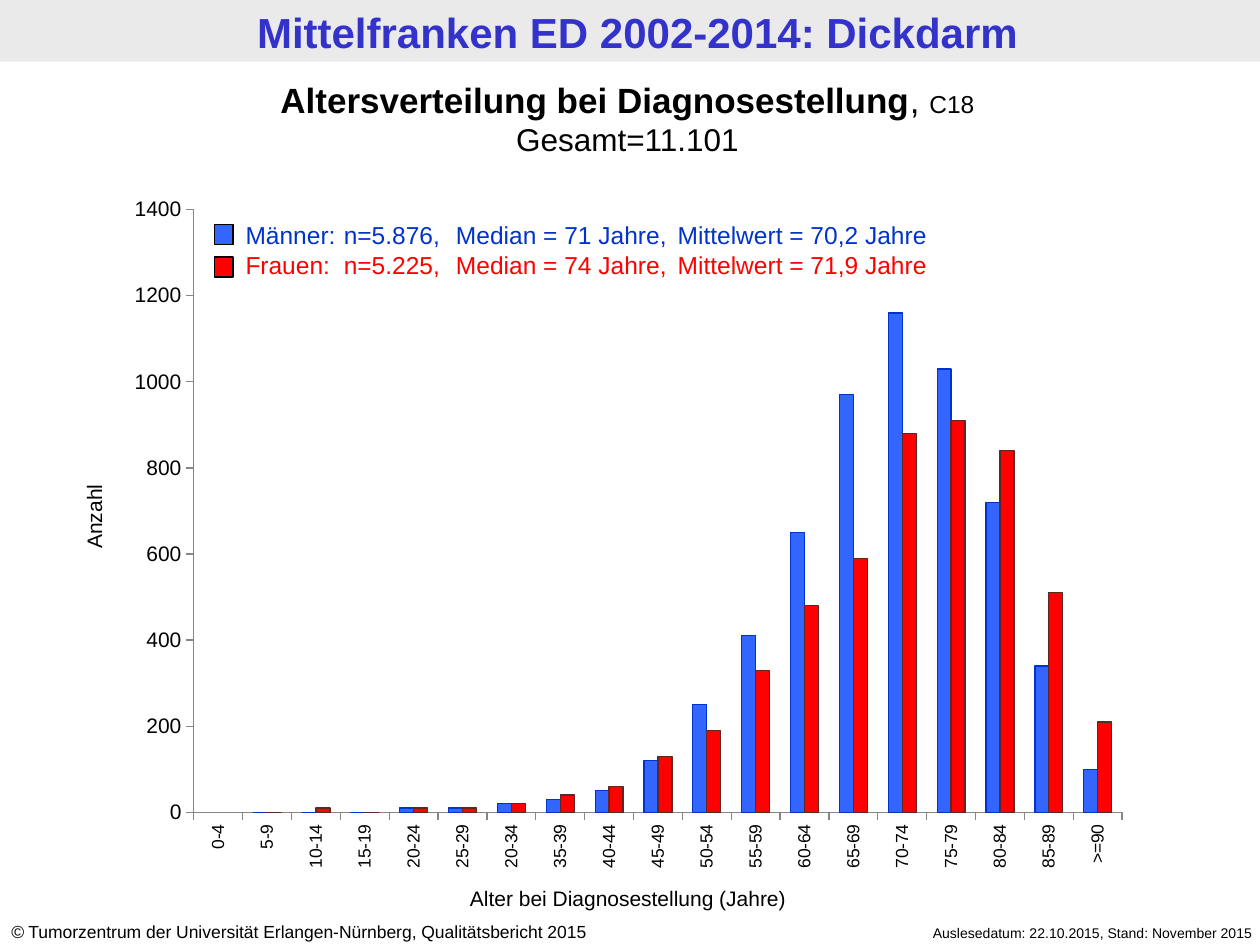
from lxml import etree
from pptx import Presentation
from pptx import util as u
from pptx.chart.data import CategoryChartData
from pptx.dml.color import RGBColor
from pptx.enum import chart as ch, shapes, text
from pptx.oxml import parse_xml
from pptx.oxml.ns import nsdecls, qn

BLACK = RGBColor(0x00, 0x00, 0x00)
WHITE = RGBColor(0xFF, 0xFF, 0xFF)
BAND = RGBColor(0xEA, 0xEA, 0xEA)
TITLE = RGBColor(0x33, 0x33, 0xCC)
BLUE = RGBColor(0x33, 0x66, 0xFF)
DARK_BLUE = RGBColor(0x00, 0x33, 0xCC)
RED = RGBColor(0xFF, 0x00, 0x00)
DARK_RED = RGBColor(0x63, 0x25, 0x23)
AXIS = RGBColor(0x86, 0x86, 0x86)
LEFT, CENTER, RIGHT = text.PP_ALIGN.LEFT, text.PP_ALIGN.CENTER, text.PP_ALIGN.RIGHT

prs = Presentation()
prs.slide_width, prs.slide_height = u.Inches(10), u.Inches(7.5)
slide = prs.slides.add_slide(prs.slide_layouts[6])


def add_text(paragraphs, box, align=LEFT, tabs=(), rotation=0, anchor=text.MSO_ANCHOR.TOP):
    sp = slide.shapes.add_textbox(*map(u.Inches, box))
    sp.rotation = rotation
    tf = sp.text_frame
    tf.word_wrap = True
    tf.vertical_anchor = anchor
    for i, runs in enumerate(paragraphs):
        p = tf.paragraphs[0] if i == 0 else tf.add_paragraph()
        p.alignment = align
        if tabs:
            tab_list = etree.SubElement(p._p.get_or_add_pPr(), qn("a:tabLst"))
            for pos in tabs:
                etree.SubElement(tab_list, qn("a:tab"), pos=str(u.Inches(pos)), algn="l")
        for words, size, color, bold, italic in runs:
            r = p.add_run()
            r.text = words
            r.font.name = "Arial"
            r.font.size = u.Pt(size)
            r.font.color.rgb = color
            r.font.bold = bold
            r.font.italic = italic


def add_box(box, fill, line=None):
    sp = slide.shapes.add_shape(shapes.MSO_SHAPE.RECTANGLE, *map(u.Inches, box))
    sp.shadow.inherit = False
    sp.fill.solid()
    sp.fill.fore_color.rgb = fill
    if line is None:
        sp.line.fill.background()
    else:
        sp.line.color.rgb = line
        sp.line.width = u.Pt(0.75)


add_box((0, 0, 10, 0.49), BAND)
add_text([[("Mittelfranken ED 2002-2014: Dickdarm", 24, TITLE, True, False)]],
         (0.06, 0.01, 10, 0.49), align=CENTER, anchor=text.MSO_ANCHOR.MIDDLE)
add_text([[("Auslesedatum: 22.10.2015, Stand: November 2015", 8, BLACK, False, False)]],
         (6.65, 7.29, 3.39, 0.24), align=RIGHT)
add_text([[("©", 10, BLACK, False, True),
           (" Tumorzentrum der Universität Erlangen-Nürnberg, Qualitätsbericht 2015",
            10, BLACK, False, False)]], (-0.01, 7.26, 5.24, 0.27))

data = CategoryChartData()
data.categories = ["0-4", "5-9", "10-14", "15-19", "20-24", "25-29", "20-34", "35-39",
                   "40-44", "45-49", "50-54", "55-59", "60-64", "65-69", "70-74",
                   "75-79", "80-84", "85-89", ">=90"]
data.add_series("Männer", [None, 0, 0, 0, 10, 10, 20, 30, 50, 120, 250, 410, 650, 970,
                           1160, 1030, 720, 340, 100])
data.add_series("Frauen", [None, 0, 10, 0, 10, 10, 20, 40, 60, 130, 190, 330, 480, 590,
                           880, 910, 840, 510, 210])
chart = slide.shapes.add_chart(ch.XL_CHART_TYPE.COLUMN_CLUSTERED, u.Inches(0.91), u.Inches(1.47),
                               u.Inches(8.16), u.Inches(5.55), data).chart
chart.has_legend = False
chart.has_title = False
chart.font.name = "Calibri"
chart.font.size = u.Pt(18)
chart.font.color.rgb = BLACK

plot = chart.plots[0]
plot.gap_width = 150
plot.overlap = 0
plot.vary_by_categories = False
for series, fill, line in zip(plot.series, (BLUE, RED), (DARK_BLUE, DARK_RED)):
    series.invert_if_negative = False
    series.format.fill.solid()
    series.format.fill.fore_color.rgb = fill
    series.format.line.color.rgb = line
    series.format.line.width = u.Pt(0.75)

for axis, size in ((chart.category_axis, 10), (chart.value_axis, 12)):
    axis.has_major_gridlines = False
    axis.major_tick_mark = ch.XL_TICK_MARK.OUTSIDE
    axis.minor_tick_mark = ch.XL_TICK_MARK.NONE
    axis.format.line.color.rgb = AXIS
    axis.format.line.width = u.Pt(0.75)
    font = axis.tick_labels.font
    font.name = "Arial"
    font.size = u.Pt(size)
    font.color.rgb = BLACK
chart.category_axis._element.find(qn("c:txPr")).find(qn("a:bodyPr")).set("rot", "-5400000")
chart.value_axis.minimum_scale = 0
chart.value_axis.maximum_scale = 1400
chart.value_axis.major_unit = 200

area = chart._chartSpace.chart.plotArea
for old in area.findall(qn("c:layout")):
    area.remove(old)
area.insert(0, parse_xml(
    f'<c:layout {nsdecls("c")}><c:manualLayout><c:layoutTarget val="inner"/>'
    '<c:xMode val="edge"/><c:yMode val="edge"/><c:x val="0.077"/><c:y val="0.035"/>'
    '<c:w val="0.903"/><c:h val="0.862"/></c:manualLayout></c:layout>'))
area.append(parse_xml(
    f'<c:spPr {nsdecls("c", "a")}><a:solidFill><a:srgbClr val="{WHITE}"/></a:solidFill></c:spPr>'))

add_text([[("Altersverteilung bei Diagnosestellung", 20, BLACK, True, False),
           (", ", 20, BLACK, False, False), ("C18", 14, BLACK, False, False)],
          [("Gesamt=11.101", 18, BLACK, False, False)]],
         (-0.04, 0.57, 10.04, 0.74), align=CENTER)
add_text([[("Männer: \tn=5.876, \tMedian = 71 Jahre, \tMittelwert = 70,2 Jahre",
            14, DARK_BLUE, False, False)],
          [("Frauen: \tn=5.225, \tMedian = 74 Jahre,\tMittelwert = 71,9 Jahre",
            14, RED, False, False)]],
         (1.85, 1.7, 6.85, 0.57), tabs=(0.78, 0.88, 1.67, 3.43))
for top, fill in ((1.78, BLUE), (2.04, RED)):
    add_box((1.7, top, 0.15, 0.16), fill, line=BLACK)
add_text([[("Alter bei Diagnosestellung (Jahre)", 12, BLACK, False, False)]],
         (3.45, 6.98, 3.07, 0.3), align=CENTER)
add_text([[("Anzahl", 12, BLACK, False, False)]],
         (-0.56, 3.95, 2.61, 0.3), align=CENTER, rotation=270)

prs.save("out.pptx")
